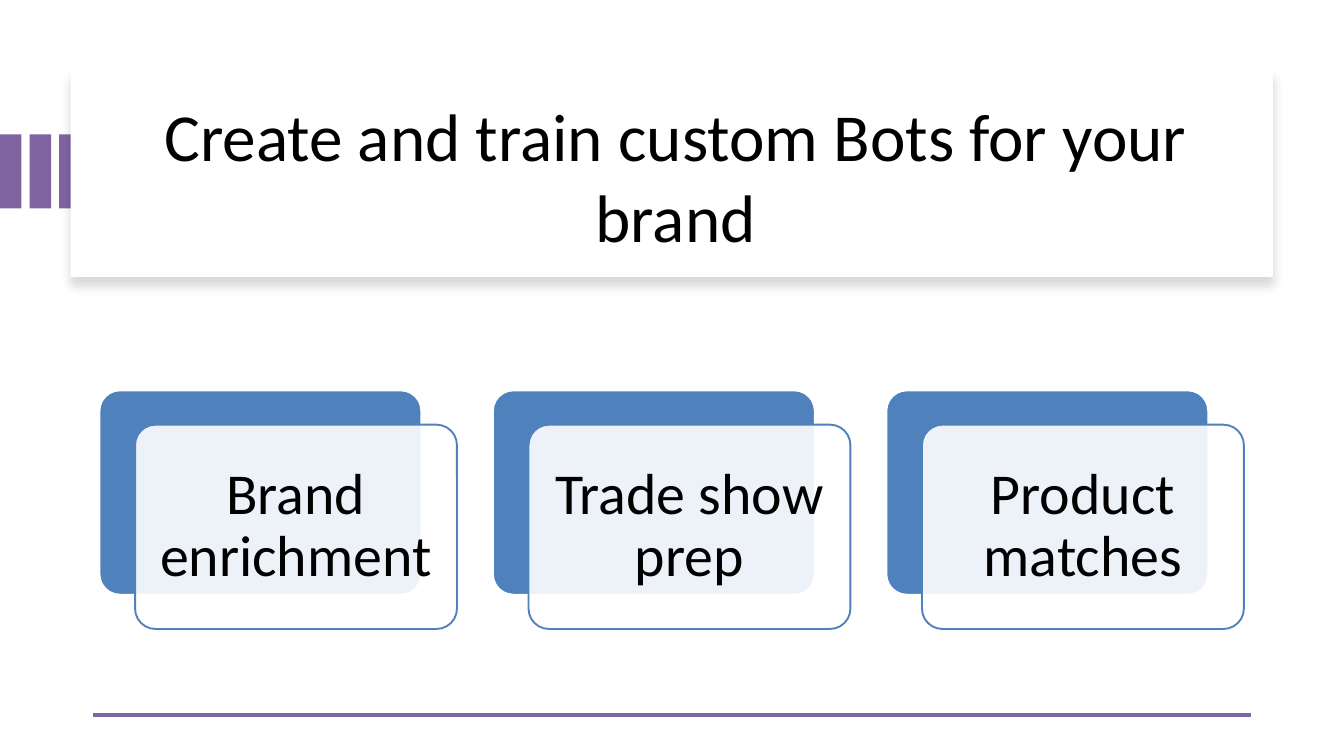
from lxml.etree import SubElement
from pptx import Presentation
from pptx.dml.color import RGBColor as RGB
from pptx.enum.shapes import MSO_CONNECTOR as LINE, MSO_SHAPE as SHAPE
from pptx.enum.text import MSO_ANCHOR as ANCHOR, MSO_AUTO_SIZE as FIT, PP_ALIGN as ALIGN
from pptx.oxml.ns import qn
from pptx.util import Inches, Pt


class Theme:
    font = "Calibri"
    ink = RGB(0, 0, 0)
    white = RGB(255, 255, 255)
    purple = RGB(0x80, 0x64, 0xA2)
    blue = RGB(0x4F, 0x81, 0xBD)
    title = Pt(72)
    label = Pt(62)


def add_box(kind, left, top, width, height, fill, line=None):
    box = slide.shapes.add_shape(kind, Inches(left), Inches(top), Inches(width), Inches(height))
    box.shadow.inherit = False
    box.fill.solid()
    box.fill.fore_color.rgb = fill
    if line is None:
        box.line.fill.background()
    else:
        box.line.color.rgb = line
        box.line.width = Pt(2)
    if kind == SHAPE.ROUNDED_RECTANGLE:
        box.adjustments[0] = 0.1
    return box


def write(frame, text, size):
    frame.text = text
    frame.word_wrap = True
    frame.auto_size = FIT.NONE
    frame.vertical_anchor = ANCHOR.MIDDLE
    para = frame.paragraphs[0]
    para.alignment = ALIGN.CENTER
    font = para.runs[0].font
    font.name, font.size, font.color.rgb = Theme.font, size, Theme.ink
    return para


deck = Presentation()
deck.slide_width, deck.slide_height = Inches(20), Inches(11.25)
slide = deck.slides.add_slide(deck.slide_layouts[5])

# Purple bars running in behind the title panel
for i in range(3):
    add_box(SHAPE.RECTANGLE, 0.44 * i, 2, 0.32, 1.1, Theme.purple)

# Title panel with a soft shadow below it
panel = add_box(SHAPE.RECTANGLE, 1.05, 1.01, 17.89, 3.11, Theme.white)
effects = panel._element.spPr.find(qn("a:effectLst"))
shadow = SubElement(effects, qn("a:outerShdw"), blurRad=str(Pt(11)), dist=str(Pt(10)),
                    dir="5400000", algn="t", rotWithShape="0")
tint = SubElement(shadow, qn("a:srgbClr"), val="000000")
SubElement(tint, qn("a:alpha"), val="15000")

title = slide.shapes.title
title.left, title.top = Inches(1.71), Inches(1.33)
title.width, title.height = Inches(16.69), Inches(2.55)
write(title.text_frame, "Create and train custom Bots for your brand", Theme.title)
panel._element.addnext(title._element)  # keeps the title in front of its panel

# Rule along the bottom
rule = slide.shapes.add_connector(LINE.STRAIGHT, Inches(18.62), Inches(10.64),
                                  Inches(1.38), Inches(10.64))
rule.line.color.rgb = Theme.purple
rule.line.width = Pt(4.5)
SubElement(rule._element.spPr, qn("a:effectLst"))

# Cards: a blue back and a nearly opaque white front
for i, label in enumerate(["Brand enrichment", "Trade show prep", "Product matches"]):
    left = 1.48 + 5.855 * i
    add_box(SHAPE.ROUNDED_RECTANGLE, left, 5.81, 4.79, 3.04, Theme.blue, Theme.white)
    card = add_box(SHAPE.ROUNDED_RECTANGLE, left + 0.53, 6.32, 4.79, 3.04,
                   Theme.white, Theme.blue)
    color = card._element.spPr.find(qn("a:solidFill"))[0]
    SubElement(color, qn("a:alpha"), val="90000")
    frame = card.text_frame
    frame.margin_left = frame.margin_right = Inches(0.25)
    write(frame, label, Theme.label).line_spacing = 0.9

deck.save("out.pptx")
